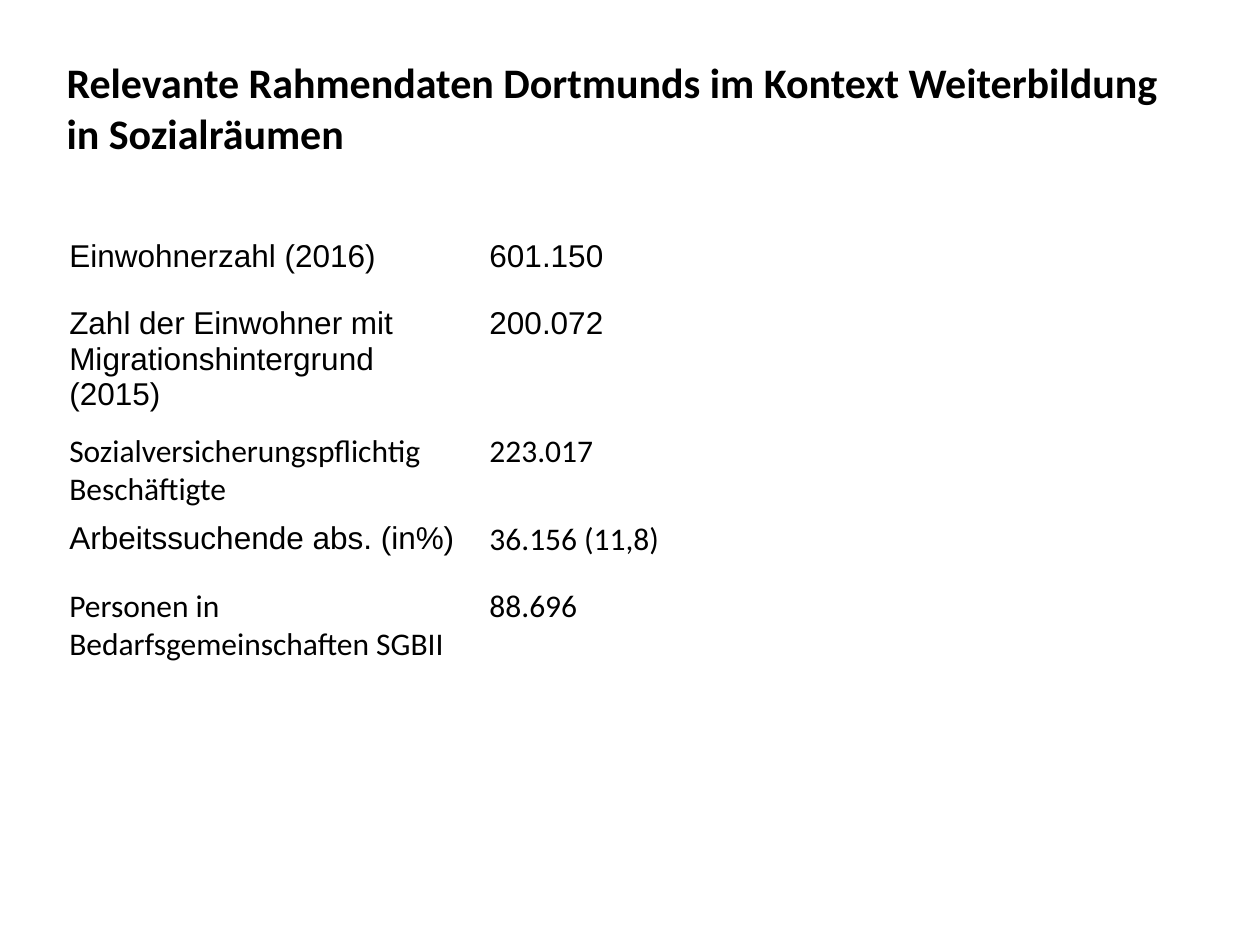
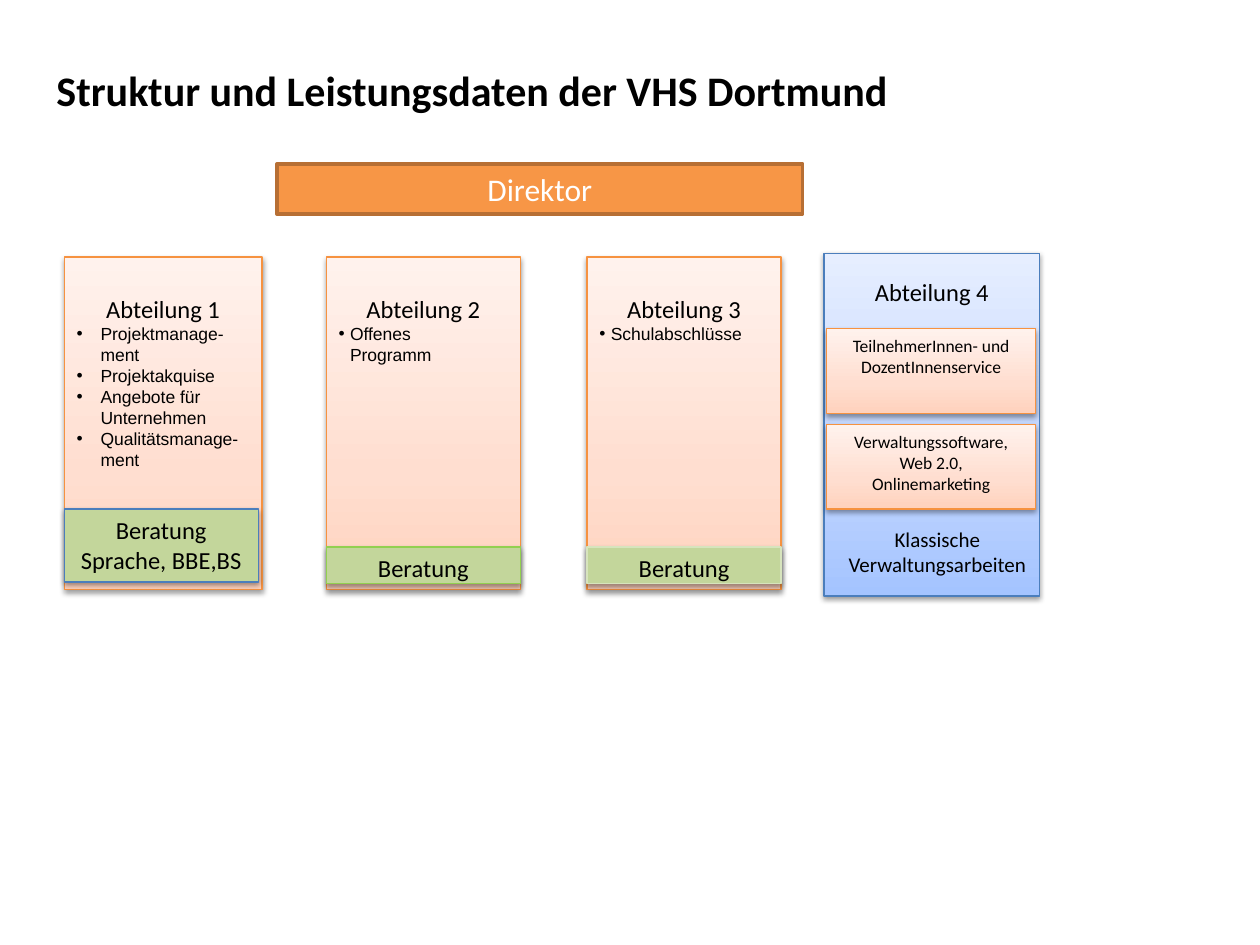
from lxml.etree import SubElement
from pptx import Presentation
from pptx.dml.color import RGBColor
from pptx.enum.shapes import MSO_SHAPE as Shape
from pptx.enum.text import MSO_ANCHOR as Anchor, PP_ALIGN as Align
from pptx.oxml.ns import qn
from pptx.util import Inches, Pt

BLACK = RGBColor(0x00, 0x00, 0x00)
WHITE = RGBColor(0xFF, 0xFF, 0xFF)
ORANGE = RGBColor(0xF7, 0x96, 0x46)
ORANGE_EDGE = RGBColor(0xF6, 0x92, 0x40)
BROWN = RGBColor(0xB7, 0x6F, 0x34)
BLUE_EDGE = RGBColor(0x4B, 0x7E, 0xBC)
GREEN = RGBColor(0xC3, 0xD6, 0x9B)
GREEN_EDGE = RGBColor(0x92, 0xD0, 0x50)
PALE_GREEN = RGBColor(0xD7, 0xE4, 0xBD)
PEACH_BLEND = [RGBColor(0xFF, 0xD2, 0xBD), RGBColor(0xFF, 0xDE, 0xD0), RGBColor(0xFF, 0xF2, 0xED)]
BLUE_BLEND = [RGBColor(0xA4, 0xC4, 0xFF), RGBColor(0xBF, 0xD4, 0xFF), RGBColor(0xE6, 0xEE, 0xFF)]
BLEND_STOPS = [0, 35, 100]

HEADING_FONT, LIST_FONT = "Calibri", "Arial"


class DeckBuilder:
    def __init__(self):
        self.deck = Presentation()
        self.deck.slide_width, self.deck.slide_height = Inches(10), Inches(7.5)
        self.page = None

    def new_page(self):
        self.page = self.deck.slides.add_slide(self.deck.slide_layouts[6])

    def add_spans(self, para, text, size, font=HEADING_FONT, color=BLACK, bold=False):
        """Add text to a paragraph, one run for each line."""
        for number, line in enumerate(text.split("\n")):
            if number:
                para.add_line_break()
            span = para.add_run()
            span.text = line
            span.font.name, span.font.size = font, Pt(size)
            span.font.bold, span.font.color.rgb = bold, color

    def text(self, area, text, size, align=Align.LEFT, anchor=Anchor.TOP, bold=False):
        frame = self.page.shapes.add_textbox(*map(Inches, area)).text_frame
        frame.word_wrap, frame.vertical_anchor = True, anchor
        frame.paragraphs[0].alignment = align
        self.add_spans(frame.paragraphs[0], text, size, bold=bold)

    def title(self, area, text, anchor=Anchor.TOP):
        self.text(area, text, 24, anchor=anchor, bold=True)

    def box(self, area, text, size, fill, edge, edge_width=0.75, color=BLACK,
            top_margin=0.05, shadow=True):
        """Draw a rectangle; fill is one colour, or a list that blends upwards."""
        box = self.page.shapes.add_shape(Shape.RECTANGLE, *map(Inches, area))
        if isinstance(fill, list):
            self.blend(box, fill)
        else:
            box.fill.solid()
            box.fill.fore_color.rgb = fill
        box.line.color.rgb, box.line.width = edge, Pt(edge_width)
        box.shadow.inherit = False
        if shadow:
            self.drop_shadow(box)
        frame = box.text_frame
        frame.word_wrap, frame.vertical_anchor = True, Anchor.TOP
        frame.margin_top = Inches(top_margin)
        frame.paragraphs[0].alignment = Align.CENTER
        self.add_spans(frame.paragraphs[0], text, size, color=color)
        return box

    def blend(self, box, colors):
        box.fill.gradient()
        box.fill.gradient_angle = 90
        stops = box._element.spPr.find(qn("a:gradFill")).find(qn("a:gsLst"))
        for stop in list(stops):
            stops.remove(stop)
        for position, color in zip(BLEND_STOPS, colors):
            stop = SubElement(stops, qn("a:gs"), pos=str(position * 1000))
            SubElement(stop, qn("a:srgbClr"), val=str(color))

    def drop_shadow(self, box):
        effects = box._element.spPr.find(qn("a:effectLst"))
        shadow = SubElement(effects, qn("a:outerShdw"), blurRad="40000", dist="20000",
                            dir="5400000", rotWithShape="0")
        tint = SubElement(shadow, qn("a:srgbClr"), val=str(BLACK))
        SubElement(tint, qn("a:alpha"), val="38000")

    def bullets(self, box, items, indent):
        for item in items:
            para = box.text_frame.add_paragraph()
            para.alignment = Align.LEFT
            self.add_spans(para, item, 10, LIST_FONT)
            properties = para._p.get_or_add_pPr()
            properties.set("marL", str(Inches(indent)))
            properties.set("indent", str(-Inches(indent)))
            SubElement(properties, qn("a:buFont"), typeface=LIST_FONT)
            SubElement(properties, qn("a:buChar"), char="•")

    def table(self, area, rows):
        """Draw a plain table whose cells are (text, font) pairs."""
        frame = self.page.shapes.add_table(len(rows), len(rows[0]), *map(Inches, area))
        table = frame.table
        table.first_row = table.horz_banding = False
        for row, cells in zip(table.rows, rows):
            for cell, (text, font) in zip(row.cells, cells):
                cell.fill.background()
                self.add_spans(cell.text_frame.paragraphs[0], text, 18, font)


def add_key_figures(builder):
    builder.new_page()
    builder.title((0.43, 0.4, 9.14, 0.91),
                  "Relevante Rahmendaten Dortmunds im Kontext Weiterbildung in Sozialräumen")
    builder.table((0.45, 1.85, 6.67, 2.65), [
        [("Einwohnerzahl (2016)", LIST_FONT), ("601.150", LIST_FONT)],
        [("Zahl der Einwohner mit Migrationshintergrund (2015)", LIST_FONT),
         ("200.072", LIST_FONT)],
        [("Sozialversicherungspflichtig Beschäftigte", HEADING_FONT), ("223.017", HEADING_FONT)],
        [("Arbeitssuchende abs. (in%)", LIST_FONT), ("36.156 (11,8)", HEADING_FONT)],
        [("Personen in Bedarfsgemeinschaften SGBII", HEADING_FONT), ("88.696", HEADING_FONT)],
    ])


def add_structure(builder):
    builder.new_page()
    builder.title((0.35, 0.36, 7.24, 0.71),
                  "Struktur und Leistungsdaten der VHS Dortmund", Anchor.MIDDLE)
    builder.box((2.2, 1.3, 4.17, 0.4), "Direktor", 18, ORANGE, BROWN, 2, WHITE, shadow=False)

    builder.box((6.54, 2.01, 1.71, 2.72), "Abteilung 4", 14, BLUE_BLEND, BLUE_EDGE,
                top_margin=0.19)
    services = ["TeilnehmerInnen- und\nDozentInnenservice",
                "Verwaltungssoftware,\nWeb 2.0,\nOnlinemarketing"]
    for number, service in enumerate(services):
        builder.box((6.56, 2.61 + 0.76 * number, 1.66, 0.67), service, 10,
                    PEACH_BLEND, ORANGE_EDGE)
    builder.text((6.54, 4.13, 1.8, 0.86), "Klassische\nVerwaltungsarbeiten", 12, Align.CENTER)

    # left, width, tasks, bullet indent, advice text, advice top, width and height, advice edge
    departments = [
        (0.51, 1.57, ["Projektmanage-ment", "Projektakquise", "Angebote für Unternehmen",
                      "Qualitätsmanage-ment"], 0.19,
         "Beratung Sprache, BBE,BS", 4.04, 1.54, 0.58, BLUE_EDGE),
        (2.59, 1.54, ["Offenes\nProgramm"], 0.09, "Beratung", 4.34, 1.54, 0.29, GREEN_EDGE),
        (4.66, 1.54, ["Schulabschlüsse"], 0.09, "Beratung", 4.34, 1.54, 0.29, PALE_GREEN),
    ]
    for number, department in enumerate(departments, 1):
        left, width, tasks, indent, advice, top, advice_width, height, edge = department
        box = builder.box((left, 2.04, width, 2.64), f"Abteilung {number}", 14,
                          PEACH_BLEND, ORANGE_EDGE, top_margin=0.29)
        builder.bullets(box, tasks, indent)
        builder.box((left, top, advice_width, height), advice, 14, GREEN, edge)


def main():
    builder = DeckBuilder()
    add_key_figures(builder)
    add_structure(builder)
    builder.deck.save("out.pptx")


if __name__ == "__main__":
    main()
